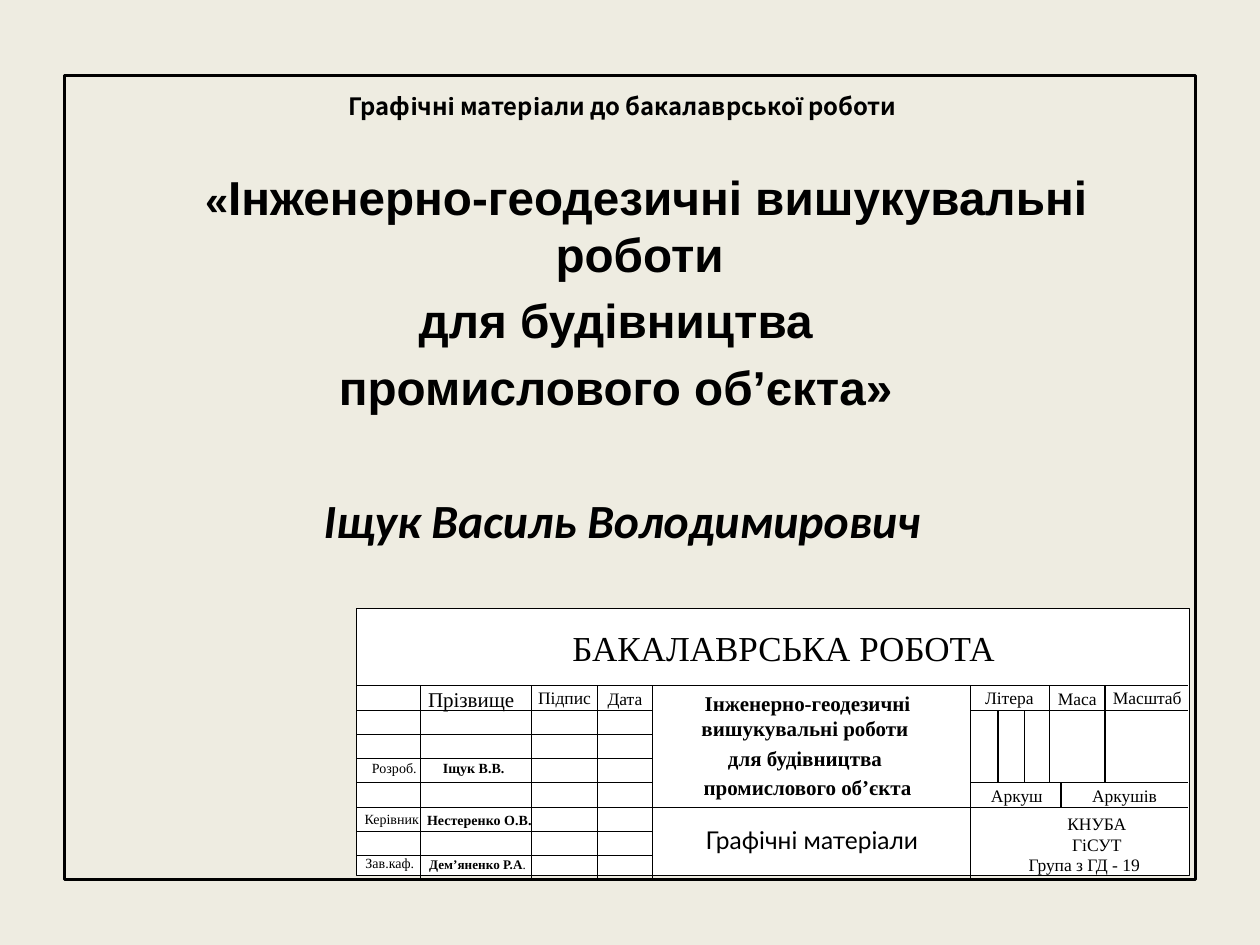
from lxml import etree
from pptx import Presentation
from pptx.dml.color import RGBColor
from pptx.enum import shapes, text
from pptx.oxml.ns import qn
from pptx.util import Inches, Pt


def color(value):
    return RGBColor.from_string(value)


def style(r, size, font, bold=False, italic=False):
    r.font.size = Pt(size)
    r.font.name = font
    r.font.bold = bold
    r.font.italic = italic
    r.font.color.rgb = color("000000")


prs = Presentation()
prs.slide_width, prs.slide_height = Inches(10), Inches(7.5)
s = prs.slides.add_slide(prs.slide_layouts[6])
s.background.fill.solid()
s.background.fill.fore_color.rgb = color("EEECE1")

sp = s.shapes.add_textbox(Inches(1.14), Inches(0.68), Inches(7.6), Inches(3.62))
tf = sp.text_frame
tf.word_wrap = True
tf.margin_top = 0
tf.margin_left = tf.margin_right = Inches(0.05)
headings = [
    (["Графічні матеріали до бакалаврської роботи"], [13.6], "Noto Sans CJK KR", 20, 0),
    (["«", "Інженерно-геодезичні вишукувальні роботи "], [23.8, 27.2], "Arial", 32.6, 26.8),
    (["для будівництва "], [27.2], "Arial", 32.6, 5.4),
    (["промислового об’єкта» "], [27.2], "Arial", 32.6, 5.4),
    (["Іщук Василь Володимирович"], [27.2], "Calibri", 32.6, 43.6),
]
for i, (parts, sizes, font, line, before) in enumerate(headings):
    p = tf.add_paragraph() if i else tf.paragraphs[0]
    p.alignment = text.PP_ALIGN.CENTER
    p.line_spacing = Pt(line)
    p.space_before = Pt(before)
    for words, size in zip(parts, sizes):
        r = p.add_run()
        r.text = words
        style(r, size, font, True, font == "Calibri")
tf.paragraphs[1]._p.get_or_add_pPr().set("marL", str(Inches(0.38)))

for x, y, w, h, fill, width in [
    (0.51, 0.6, 8.98, 6.38, None, 1.5),
    (2.83, 4.83, 6.61, 2.12, "FFFFFF", 0.75),
]:
    sp = s.shapes.add_shape(shapes.MSO_SHAPE.RECTANGLE, Inches(x), Inches(y), Inches(w), Inches(h))
    sp.shadow.inherit = False
    if fill:
        sp.fill.solid()
        sp.fill.fore_color.rgb = color(fill)
    else:
        sp.fill.background()
    sp.line.color.rgb = color("000000")
    sp.line.width = Pt(width)

left, right, top, bottom = 2.83, 9.43, 5.44, 6.98
middle, side = 5.18, 7.7
lines = [(left, top, right, top), (left, 6.41, right, 6.41)]
lines += [(left, y, middle, y) for y in (5.64, 5.83, 6.02, 6.21, 6.6, 6.79)]
lines += [(side, y, right, y) for y in (5.64, 6.21)]
lines += [(x, top, x, bottom) for x in (3.34, 4.22, 4.74, middle, side)]
lines += [(x, top, x, 6.21) for x in (8.33, 8.77)]
lines += [(x, 5.64, x, 6.21) for x in (7.92, 8.13)]
lines += [(8.42, 6.21, 8.42, 6.41)]
for line in lines:
    c = s.shapes.add_connector(shapes.MSO_CONNECTOR.STRAIGHT, *[Inches(v) for v in line])
    c.line.color.rgb = color("000000")
    c.line.width = Pt(0.75)
    etree.SubElement(c._element.spPr, qn("a:effectLst"))

serif = "Times New Roman"
labels = [
    (4.39, 4.97, 3.66, 0.39, "БАКАЛАВРСЬКА РОБОТА", 20, serif, False),
    (5.07, 5.48, 2.68, 0.84,
     "Інженерно-геодезичні вишукувальні роботи \nдля будівництва \nпромислового об’єкта", 12, serif, True),
    (3.35, 5.45, 0.78, 0.18, "Прізвище", 12, serif, False),
    (4.22, 5.45, 0.52, 0.18, "Підпис", 10, serif, False),
    (4.74, 5.46, 0.44, 0.18, "Дата", 10, serif, False),
    (7.75, 5.45, 0.52, 0.18, "Літера", 10, serif, False),
    (8.33, 5.46, 0.44, 0.18, "Маса", 10, serif, False),
    (8.79, 5.45, 0.63, 0.18, "Масштаб", 10, serif, False),
    (7.81, 6.23, 0.52, 0.18, "Аркуш", 10, serif, False),
    (8.54, 6.23, 0.77, 0.18, "Аркушів", 10, serif, False),
    (2.82, 6.03, 0.62, 0.18, "Розроб.", 8, serif, False),
    (3.34, 6.03, 0.84, 0.18, "Іщук В.В.", 8, serif, True),
    (2.83, 6.43, 0.56, 0.18, "Керівник", 8, serif, False),
    (3.35, 6.44, 0.91, 0.14, "Нестеренко О.В.", 8, serif, True),
    (2.81, 6.78, 0.57, 0.18, "Зав.каф.", 8, serif, False),
    (3.37, 6.8, 0.84, 0.18, "Дем’яненко Р.А", 7.5, serif, True),
    (7.99, 6.45, 1.43, 0.33, "КНУБА\nГіСУТ", 10, serif, False),
    (7.89, 6.78, 1.43, 0.17, "Група з ГД - 19", 10, serif, False),
    (5.48, 6.55, 1.93, 0.24, "Графічні матеріали", 14, "Lato", False),
]
for x, y, w, h, words, size, font, bold in labels:
    sp = s.shapes.add_textbox(Inches(x), Inches(y), Inches(w), Inches(h))
    tf = sp.text_frame
    tf.margin_left = tf.margin_right = tf.margin_top = tf.margin_bottom = 0
    tf.word_wrap = True
    tf.text = words
    for i, p in enumerate(tf.paragraphs):
        p.alignment = text.PP_ALIGN.CENTER
        if bold and i:
            p.space_before = Pt(2.4)
        style(p.runs[0], size, font, bold)
    if words.startswith("Дем"):
        r = p.add_run()
        r.text = "."
        style(r, size, font)

prs.save("out.pptx")
